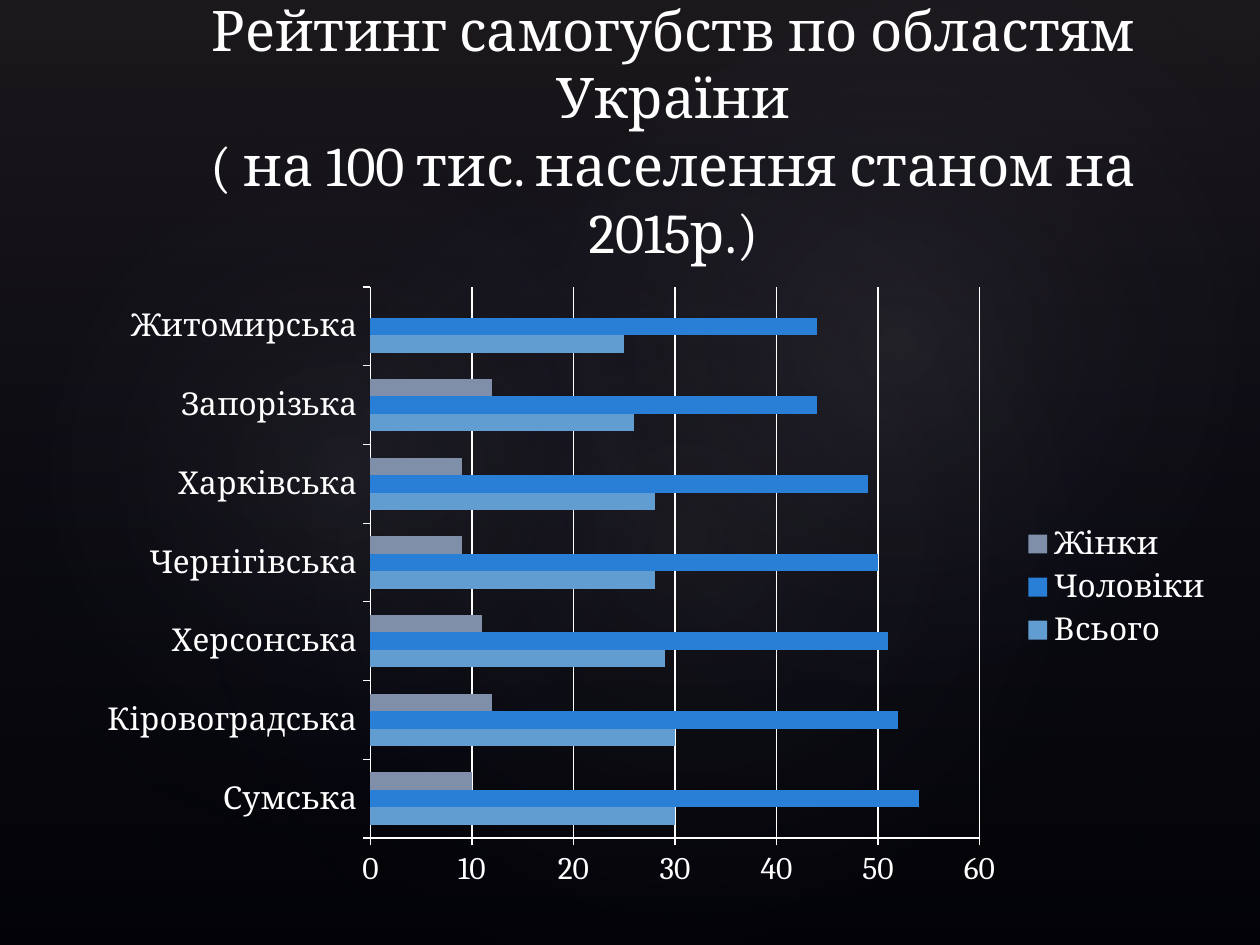
from lxml import etree
from pptx import Presentation
from pptx.chart.data import CategoryChartData
from pptx.dml.color import RGBColor
from pptx.enum.chart import XL_CHART_TYPE, XL_LEGEND_POSITION, XL_TICK_MARK
from pptx.enum.shapes import MSO_SHAPE as Shape
from pptx.enum.text import MSO_ANCHOR, MSO_AUTO_SIZE, PP_ALIGN
from pptx.oxml import parse_xml
from pptx.oxml.ns import nsdecls
from pptx.util import Inches, Pt

# Content
TITLE_LINES = [
    "Рейтинг самогубств по областям України",
    "( на 100 тис. населення станом на 2015р.)",
]
REGIONS = ["Сумська", "Кіровоградська", "Херсонська", "Чернігівська",
           "Харківська", "Запорізька", "Житомирська"]
RATES = [
    ("Всього", [30, 30, 29, 28, 28, 26, 25], "total"),
    ("Чоловіки", [54, 52, 51, 50, 49, 44, 44], "men"),
    ("Жінки", [10, 12, 11, 9, 9, 12, None], "women"),
]
COLORS = {
    "background": "000000", "text": "FFFFFF", "haze": "504652",
    "navy": "242852", "glow": "C4BCC6",
    "total": "629DD1", "men": "297FD5", "women": "7F8FA9",
}
FONT = "Cambria"
# Glows: left, top, width, height, rotation, opacity in percent
GLOWS = [
    (1.5, 1.14, 7.92, 6.24, 328.7, 7),
    (-0.3, 1.28, 6.06, 4.9, 294.3, 8),
    (3.58, 0.13, 7.09, 5.2, 328.7, 8),
]
LINEAR = '<a:lin ang="5400000" scaled="0"/>'
RADIAL = ('<a:path path="circle">'
          '<a:fillToRect l="50000" t="50000" r="50000" b="50000"/></a:path>')


def rgb(name):
    return RGBColor.from_string(COLORS[name])


def style_font(font, size):
    font.name, font.size = FONT, Pt(size)
    font.color.rgb = rgb("text")


def add_gradient(slide, kind, box, stops, direction, rotation=0):
    """Add a borderless shape; stops are (position %, colour, opacity %)."""
    shape = slide.shapes.add_shape(kind, *map(Inches, box))
    shape.rotation = rotation
    shape.shadow.inherit = False
    shape.line.fill.background()
    shape.fill.background()
    stop_xml = "".join(
        f'<a:gs pos="{pos * 1000}"><a:srgbClr val="{COLORS[color]}">'
        f'<a:alpha val="{alpha * 1000}"/></a:srgbClr></a:gs>'
        for pos, color, alpha in stops)
    gradient = parse_xml(f'<a:gradFill {nsdecls("a")} rotWithShape="1">'
                         f'<a:gsLst>{stop_xml}</a:gsLst>{direction}</a:gradFill>')
    properties = shape.element.spPr
    properties.replace(properties.find("{*}noFill"), gradient)


def add_backdrop(slide):
    slide.background.fill.solid()
    slide.background.fill.fore_color.rgb = rgb("background")
    add_gradient(slide, Shape.RECTANGLE, (0, 0, 10, 7.5),
                 [(0, "haze", 36), (100, "navy", 10)], LINEAR)
    for *box, rotation, opacity in GLOWS:
        add_gradient(slide, Shape.OVAL, box,
                     [(0, "glow", opacity), (58, "navy", 0)], RADIAL, rotation)


def add_rates_chart(slide):
    data = CategoryChartData()
    data.categories = REGIONS
    for name, values, _ in RATES:
        data.add_series(name, values)
    chart = slide.shapes.add_chart(
        XL_CHART_TYPE.BAR_CLUSTERED, Inches(0.67), Inches(2.18),
        Inches(9.06), Inches(4.96), data).chart
    style_font(chart.font, 18)
    chart.has_title = False
    chart.has_legend = True
    chart.legend.position = XL_LEGEND_POSITION.RIGHT
    chart.legend.include_in_layout = False

    plot = chart.plots[0]
    plot.gap_width = 150
    plot.vary_by_categories = False
    for series, (_, _, color) in zip(plot.series, RATES):
        series.format.fill.solid()
        series.format.fill.fore_color.rgb = rgb(color)

    rate_axis = chart.value_axis
    rate_axis.minimum_scale, rate_axis.maximum_scale = 0, 60
    rate_axis.major_unit = 10
    rate_axis.has_major_gridlines = True
    for axis in (chart.category_axis, rate_axis):
        axis.major_tick_mark = XL_TICK_MARK.OUTSIDE
    for ruled in (chart.category_axis, rate_axis, rate_axis.major_gridlines):
        ruled.format.line.color.rgb = rgb("text")
        ruled.format.line.width = Pt(0.75)


def place_title(slide):
    title = slide.shapes.title
    title.left, title.top = Inches(1.22), Inches(1.15)
    title.width, title.height = Inches(8.25), Inches(1)
    frame = title.text_frame
    frame.word_wrap = True
    frame.auto_size = MSO_AUTO_SIZE.NONE
    frame.vertical_anchor = MSO_ANCHOR.BOTTOM
    heading = frame.paragraphs[0]
    heading.text = "\v".join(TITLE_LINES)
    heading.alignment = PP_ALIGN.CENTER
    style_font(heading.font, 32)
    # Bring the title in front of the backdrop
    slide.shapes.element.append(title.element)


def main():
    deck = Presentation()
    deck.slide_width, deck.slide_height = Inches(10), Inches(7.5)
    slide = deck.slides.add_slide(deck.slide_layouts[5])
    add_backdrop(slide)
    add_rates_chart(slide)
    place_title(slide)
    deck.save("out.pptx")


if __name__ == "__main__":
    main()
